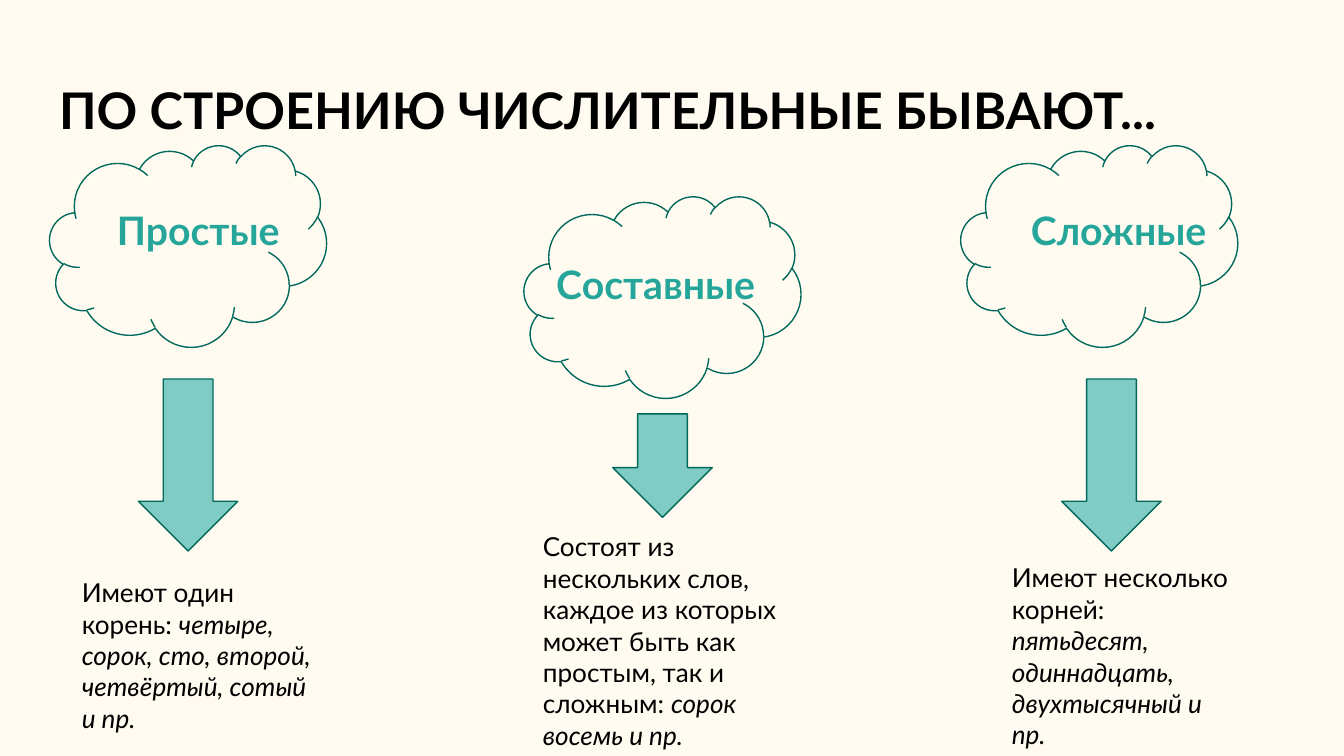
from pptx import Presentation
from pptx.dml.color import RGBColor
from pptx.enum.shapes import MSO_SHAPE as Kind
from pptx.enum.text import MSO_ANCHOR as Anchor, PP_ALIGN as Align
from pptx.util import Inches, Pt

# Content: heading, rule, examples
TITLE = "ПО СТРОЕНИЮ ЧИСЛИТЕЛЬНЫЕ БЫВАЮТ..."
TYPES = [
    ("Простые", "Имеют один корень: ",
     "четыре, сорок, сто, второй, четвёртый, сотый и пр."),
    ("Составные", "Состоят из нескольких слов, каждое из которых "
     "может быть как простым, так и сложным: ", "сорок восемь и пр."),
    ("Сложные", "Имеют несколько корней: ",
     "пятьдесят, одиннадцать, двухтысячный и пр."),
]

CREAM = RGBColor(0xFF, 0xFB, 0xF0)
BLACK = RGBColor(0, 0, 0)
TEAL = RGBColor(0x26, 0xA6, 0x9A)
DARK = RGBColor(0x00, 0x69, 0x5C)
MINT = RGBColor(0x80, 0xCB, 0xC4)

# Places in inches: one entry per column
WIDE = Inches(10)
HIGH = WIDE * 9 // 16
CLOUD = (2.06, 1.5)
ARROW = 0.74
COLS = [
    dict(cloud=(0.37, 1.08), head=(0.77, 1.38, 2.29, 0.77),
         arrow=(1.03, 2.82, ARROW, 1.28), note=(0.51, 4.19, 1.92, 1.38)),
    dict(cloud=(3.9, 1.46), head=(4.04, 1.84, 1.92, 0.56),
         arrow=(4.56, 3.08, ARROW, 0.77), note=(3.94, 3.85, 2.12, 1.85)),
    dict(cloud=(7.15, 1.08), head=(7.57, 1.38, 2.21, 0.77),
         arrow=(7.9, 2.82, ARROW, 1.28), note=(7.43, 4.08, 1.83, 1.62)),
]

# Text formats
BIG = dict(size=Pt(27), bold=True)
HEAD = dict(size=Pt(21), bold=True)
NOTE = dict(size=Pt(14), bold=False)
FRAME = dict(word_wrap=True, vertical_anchor=Anchor.TOP,
             **{f"margin_{side}": Inches(0.1)
                for side in ("left", "top", "right", "bottom")})
PARA = dict(alignment=Align.LEFT, space_before=Pt(0))
LOOSE = dict(line_spacing=1.15, space_after=Pt(12))


def apply(item, form):
    for key, val in form.items():
        setattr(item, key, val)


def place(shape, box):
    names = ("left", "top", "width", "height")
    apply(shape, {key: Inches(val) for key, val in zip(names, box)})


def write(shape, box, runs, color, para=None):
    place(shape, box)
    frame = shape.text_frame
    apply(frame, FRAME)
    line = frame.paragraphs[0]
    apply(line, PARA | (para or {}))
    for text, form in runs:
        run = line.add_run()
        run.text = text
        apply(run.font, dict(name="Lato") | form)
        run.font.color.rgb = color


def draw(kind, box, fill=None):
    shape = slide.shapes.add_shape(kind, *map(Inches, box))
    shape.shadow.inherit = False
    if fill is None:
        shape.fill.background()
    else:
        shape.fill.solid()
        shape.fill.fore_color.rgb = fill
    shape.line.color.rgb = DARK
    shape.line.width = Pt(0.75)


def add_box():
    return slide.shapes.add_textbox(0, 0, 0, 0)


deck = Presentation()
deck.slide_width, deck.slide_height = WIDE, HIGH
slide = deck.slides.add_slide(deck.slide_layouts[4])
slide.background.fill.solid()
slide.background.fill.fore_color.rgb = CREAM

# Title, with two body slots for the outer headings
slots = {item.placeholder_format.idx: item for item in slide.placeholders}
write(slots[0], (0.34, 0.49, 9.32, 0.67), [(TITLE, BIG)], BLACK)
for idx in (2, 4):
    item = slots[idx].element
    item.getparent().remove(item)
heads = [slots[1], None, slots[3]]

# Columns: heading in a cloud, arrow, note
for (name, rule, words), col, slot in zip(TYPES, COLS, heads):
    write(slot or add_box(), col["head"], [(name, HEAD)], TEAL,
          LOOSE if slot else None)
    draw(Kind.CLOUD, col["cloud"] + CLOUD)
    draw(Kind.DOWN_ARROW, col["arrow"], MINT)
    write(add_box(), col["note"],
          [(rule, NOTE), (words, NOTE | dict(italic=True))], BLACK)

deck.save("out.pptx")
